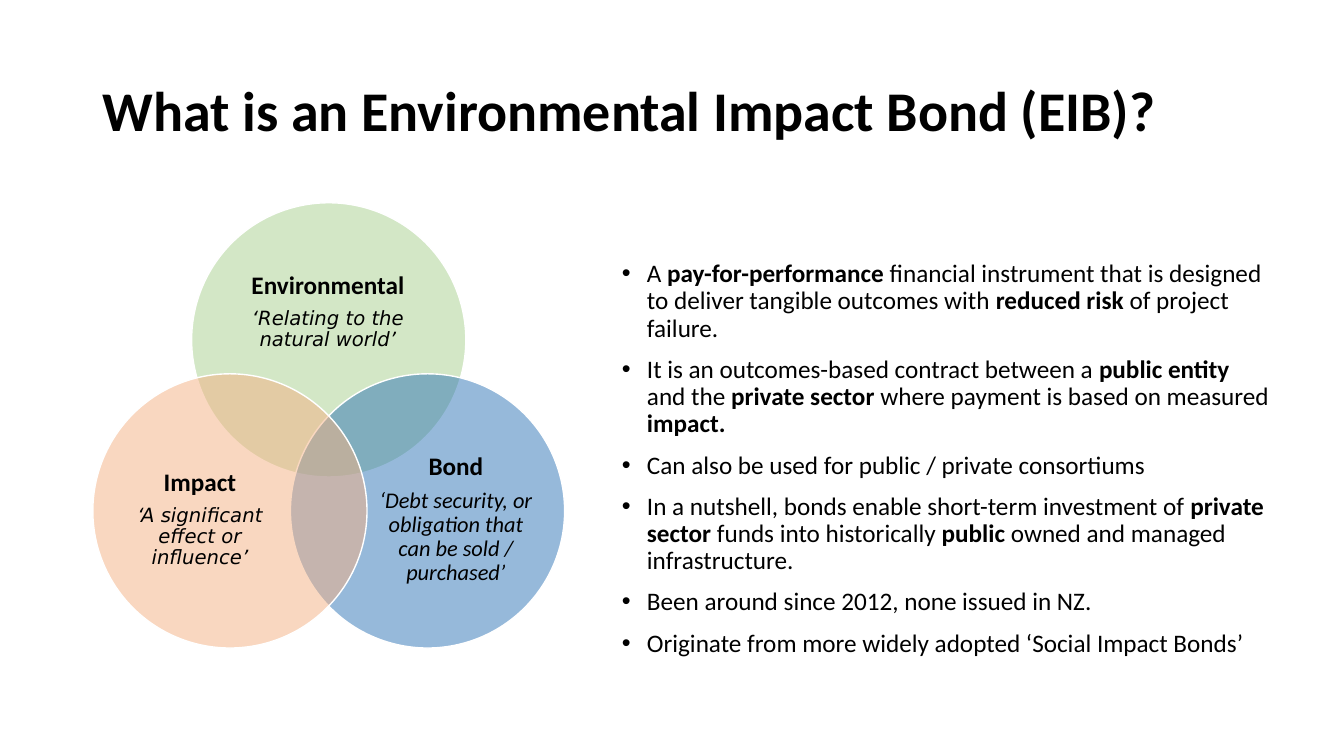
import lxml.etree
import pptx
import pptx.dml.color
import pptx.enum.shapes
import pptx.enum.text
import pptx.oxml.ns
import pptx.util

Cm = pptx.util.Cm
Pt = pptx.util.Pt
qn = pptx.oxml.ns.qn
ANCHOR = pptx.enum.text.MSO_ANCHOR
ALIGN = pptx.enum.text.PP_ALIGN

CIRCLE_SIZE = 6.91
BULLET_INDENT = 0.635

# circle left/top, text box left/top/width/height (cm), fill, heading, meaning, size, font
CIRCLES = [
    ((4.83, 5.11), (5.74, 6.3, 5.05, 3.1), "A9D18E",
     "Environmental", "‘Relating to the natural world’", 14, "DejaVu Sans"),
    ((7.32, 9.42), (9.42, 11.2, 4.14, 3.78), "2E75B6",
     "Bond", "‘Debt security, or obligation that can be sold / purchased’", 16, "Calibri"),
    ((2.34, 9.42), (2.97, 11.2, 4.14, 3.78), "F4B183",
     "Impact", "‘A significant effect or influence’", 14, "DejaVu Sans"),
]

BULLETS = [
    "A **pay-for-performance **financial instrument that is designed to deliver "
    "tangible outcomes with **reduced risk **of project failure.",
    "It is an outcomes-based contract between a **public entity **and the "
    "**private sector **where payment is based on measured **impact.**",
    "Can also be used for public / private consortiums",
    "In a nutshell, bonds enable short-term investment of **private sector **funds "
    "into historically **public **owned and managed infrastructure.",
    "Been around since 2012, none issued in NZ.",
    "Originate from more widely adopted ‘Social Impact Bonds’",
]


def rgb(color):
    return pptx.dml.color.RGBColor.from_string(color)


def add_text_frame(shapes, box, anchor=ANCHOR.TOP):
    tf = shapes.add_textbox(*map(Cm, box)).text_frame
    tf.word_wrap = True
    tf.vertical_anchor = anchor
    return tf


def add_paragraph(tf, text, size, font="Calibri", bold=False, italic=False):
    """Fill the next paragraph; text between ** marks switches bold on and off."""
    p = tf.paragraphs[0]
    if p.runs:
        p = tf.add_paragraph()
    p.line_spacing = 0.9
    for i, part in enumerate(text.split("**")):
        if part:
            r = p.add_run()
            r.text = part
            r.font.name = font
            r.font.size = Pt(size)
            r.font.bold = bold or i % 2 == 1
            r.font.italic = italic
            r.font.color.rgb = rgb("000000")
    return p


def add_bullet(p):
    pPr = p._p.get_or_add_pPr()
    pPr.set("marL", str(Cm(BULLET_INDENT)))
    pPr.set("indent", str(-Cm(BULLET_INDENT)))
    lxml.etree.SubElement(pPr, qn("a:buFont"), typeface="Arial")
    lxml.etree.SubElement(pPr, qn("a:buChar"), char="•")


def add_circle(shapes, position, color):
    """Draw a half-transparent circle with a white outline."""
    sp = shapes.add_shape(pptx.enum.shapes.MSO_SHAPE.OVAL, *map(Cm, position),
                          Cm(CIRCLE_SIZE), Cm(CIRCLE_SIZE))
    sp.shadow.inherit = False
    sp.fill.solid()
    sp.fill.fore_color.rgb = rgb(color)
    clr = sp._element.spPr.find(qn("a:solidFill")).find(qn("a:srgbClr"))
    lxml.etree.SubElement(clr, qn("a:alpha"), val="50000")
    sp.line.color.rgb = rgb("FFFFFF")
    sp.line.width = Pt(1)


def add_definition(shapes, box, heading, meaning, size, font):
    tf = add_text_frame(shapes, box, ANCHOR.MIDDLE)
    tf.margin_left = tf.margin_right = tf.margin_top = tf.margin_bottom = 0
    for p in (add_paragraph(tf, heading, 18, bold=True),
              add_paragraph(tf, meaning, size, font, italic=True)):
        p.alignment = ALIGN.CENTER
        p.space_after = Pt(6)


def main():
    prs = pptx.Presentation()
    prs.slide_width, prs.slide_height = Cm(33.87), Cm(19.05)
    s = prs.slides.add_slide(prs.slide_layouts[6])

    title = add_text_frame(s.shapes, (2.34, 1.02, 29.21, 3.68), ANCHOR.MIDDLE)
    add_paragraph(title, "What is an Environmental Impact Bond (EIB)?", 40, bold=True)

    body = add_text_frame(s.shapes, (15.42, 6.45, 16.89, 12.01))
    for text in BULLETS:
        p = add_paragraph(body, text, 18)
        p.space_before = Pt(10)
        add_bullet(p)

    venn = s.shapes.add_group_shape()
    for position, box, color, heading, meaning, size, font in CIRCLES:
        add_circle(venn.shapes, position, color)
        add_definition(venn.shapes, box, heading, meaning, size, font)

    prs.save("out.pptx")


if __name__ == "__main__":
    main()
